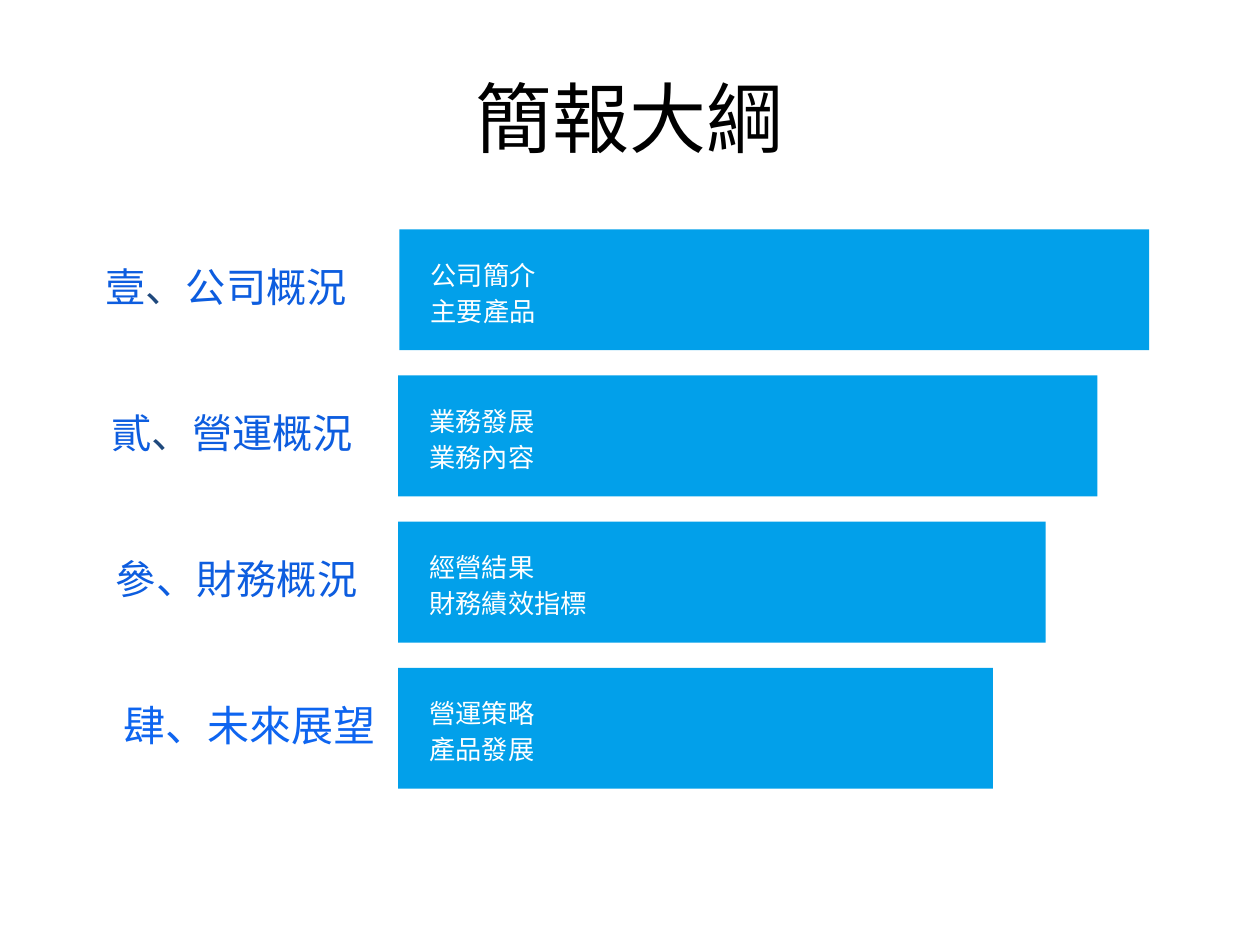
"""Build the agenda slide: four labelled bars that shorten step by step."""
from pptx import Presentation
from pptx.dml.color import RGBColor
from pptx.enum import shapes, text
from pptx.util import Inches, Pt

BLACK = RGBColor(0x00, 0x00, 0x00)
WHITE = RGBColor(0xFF, 0xFF, 0xFF)
BAR_BLUE = RGBColor(0x02, 0xA0, 0xEA)
LABEL_BLUE = RGBColor(0x0D, 0x5D, 0xDF)
BRIGHT_BLUE = RGBColor(0x0E, 0x65, 0xF0)
NAVY = RGBColor(0x1F, 0x49, 0x7D)
CENTER, RIGHT, LEFT = text.PP_ALIGN.CENTER, text.PP_ALIGN.RIGHT, text.PP_ALIGN.LEFT

TITLE = "簡報大綱"
SECTIONS = [
    {"label": [("壹", "Roboto", LABEL_BLUE), ("、", "Arial", NAVY), ("公司概況", "Roboto", LABEL_BLUE)],
     "label_size": 23, "align": CENTER, "label_span": (0.5, 2.59), "bar_span": (3.17, 5.95),
     "items": ["公司簡介", "主要產品"], "items_box": (3.32, 1.93, 5.43, 0.76), "filled": True},
    {"label": [("貳", "Roboto", LABEL_BLUE), ("、", "Arial", NAVY), ("營運概況", "Roboto", LABEL_BLUE)],
     "label_size": 23, "align": CENTER, "label_span": (0.61, 2.47), "bar_span": (3.16, 5.55),
     "items": ["業務發展", "業務內容"], "items_box": (3.31, 3.25, 4.99, 0.43), "filled": True},
    {"label": [("參、財務概況", "Roboto", LABEL_BLUE)],
     "label_size": 23, "align": CENTER, "label_span": (0.68, 2.4), "bar_span": (3.16, 5.14),
     "items": ["經營結果", "財務績效指標"], "items_box": (3.31, 4.41, 4.4, 0.43), "filled": False},
    {"label": [("肆、未來展望", "Roboto", BRIGHT_BLUE)],
     "label_size": 24, "align": RIGHT, "label_span": (0.68, 2.4), "bar_span": (3.16, 4.72),
     "items": ["營運策略", "產品發展"], "items_box": (3.31, 5.57, 4.4, 0.43), "filled": False},
]
FIRST_TOP, PITCH, BAR_HEIGHT = 1.82, 1.16, 0.96
LABEL_INSET, LABEL_HEIGHT = 0.06, 0.83


def add_bar(parent, box):
    shape = parent.shapes.add_shape(shapes.MSO_SHAPE.RECTANGLE, *map(Inches, box))
    shape.shadow.inherit = False
    shape.fill.solid()
    shape.fill.fore_color.rgb = BAR_BLUE
    shape.line.fill.background()
    return shape


def add_text_box(parent, box):
    return parent.shapes.add_textbox(*map(Inches, box))


def write(shape, lines, size, align, spacing=None):
    frame = shape.text_frame
    frame.word_wrap = True
    frame.vertical_anchor = text.MSO_ANCHOR.MIDDLE
    for index, runs in enumerate(lines):
        paragraph = frame.add_paragraph() if index else frame.paragraphs[0]
        paragraph.alignment = align
        paragraph.line_spacing = spacing
        for words, font, color in runs:
            run = paragraph.add_run()
            run.text = words
            run.font.name = font
            run.font.size = Pt(size)
            run.font.color.rgb = color


def add_section(slide, section, top):
    group = slide.shapes.add_group_shape()
    left, width = section["label_span"]
    label = add_text_box(group, (left, top + LABEL_INSET, width, LABEL_HEIGHT))
    write(label, [section["label"]], section["label_size"], section["align"], 0.9)
    left, width = section["bar_span"]
    add_bar(group, (left, top, width, BAR_HEIGHT))
    add_items = add_bar if section["filled"] else add_text_box
    items = add_items(group, section["items_box"])
    write(items, [[(item, "Roboto", WHITE)] for item in section["items"]], 15, LEFT, 1.15)


def main():
    presentation = Presentation()
    presentation.slide_width, presentation.slide_height = Inches(10), Inches(7.5)
    slide = presentation.slides.add_slide(presentation.slide_layouts[6])
    title = add_text_box(slide, (0.5, 0.3, 9, 1.25))
    write(title, [[(TITLE, "Arial", BLACK)]], 44, CENTER)
    for index, section in enumerate(SECTIONS):
        add_section(slide, section, FIRST_TOP + index * PITCH)
    presentation.save("out.pptx")


if __name__ == "__main__":
    main()
